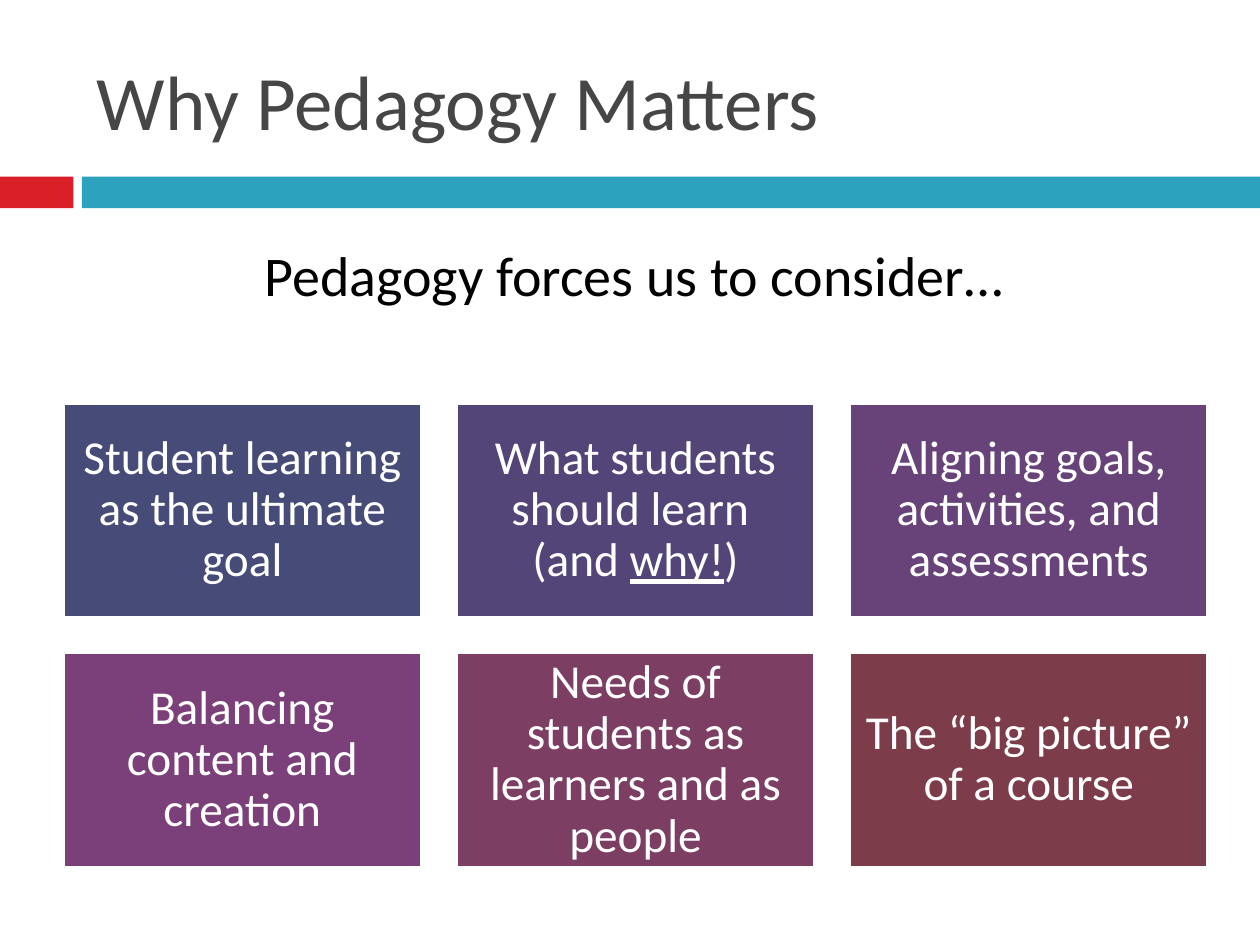
from dataclasses import dataclass

import pptx
import pptx.dml.color
import pptx.enum.shapes
import pptx.enum.text
import pptx.util
from pptx.util import Cm


@dataclass(frozen=True)
class Theme:
    font: str = "Calibri"
    title_size: int = 44
    lead_size: int = 32
    card_size: int = 27
    title: str = "464646"
    lead: str = "000000"
    white: str = "FFFFFF"
    accent: str = "DA1F28"
    band: str = "2DA2BF"
    cards: tuple = ("474B78", "544579", "67437A", "7B4079", "7C3E63", "7D3C4A")


@dataclass(frozen=True)
class Box:
    """A region of the slide, in centimetres."""
    left: float
    top: float
    width: float
    height: float

    def lengths(self):
        return Cm(self.left), Cm(self.top), Cm(self.width), Cm(self.height)


THEME = Theme()
UNDERLINED = "why!"
# Each card is a list of paragraphs, each paragraph a list of runs.
CARDS = [
    [["Student learning as the ultimate goal"]],
    [["What students should learn "], ["(and ", UNDERLINED, ")"]],
    [["Aligning goals, activities, and assessments"]],
    [["Balancing content and creation"]],
    [["Needs of students as learners and as people"]],
    [["The “big picture” of a course"]],
]


def rgb(value):
    return pptx.dml.color.RGBColor.from_string(value)


def format_run(run, size, color):
    run.font.name = THEME.font
    run.font.size = pptx.util.Pt(size)
    run.font.color.rgb = rgb(color)


def add_rectangle(slide, box, fill):
    shape = slide.shapes.add_shape(
        pptx.enum.shapes.MSO_SHAPE.RECTANGLE, *box.lengths())
    shape.shadow.inherit = False
    shape.fill.solid()
    shape.fill.fore_color.rgb = rgb(fill)
    shape.line.fill.background()
    return shape


def add_line_of_text(slide, box, text, size, color, anchor):
    text_frame = slide.shapes.add_textbox(*box.lengths()).text_frame
    text_frame.word_wrap = True
    text_frame.vertical_anchor = anchor
    text_frame.text = text
    format_run(text_frame.paragraphs[0].runs[0], size, color)


def add_header(slide, box):
    """Title above a two-part colour band that spans the box."""
    band_height, accent_width, gap = 0.64, 1.48, 0.17
    band_top = box.top + box.height - band_height
    band_left = box.left + accent_width + gap
    add_rectangle(slide, Box(box.left, band_top, accent_width, band_height),
                  THEME.accent)
    add_rectangle(slide, Box(band_left, band_top,
                             box.left + box.width - band_left, band_height),
                  THEME.band)
    title_box = Box(box.left + 1.7, box.top + 0.64, box.width - 2.74, 2.74)
    add_line_of_text(slide, title_box, "Why Pedagogy Matters",
                     THEME.title_size, THEME.title,
                     pptx.enum.text.MSO_ANCHOR.MIDDLE)


def add_card(slide, box, paragraphs, fill):
    shape = add_rectangle(slide, box, fill)
    shape.line.color.rgb = rgb(THEME.white)
    shape.line.width = pptx.util.Pt(1.5)
    text_frame = shape.text_frame
    text_frame.word_wrap = True
    text_frame.vertical_anchor = pptx.enum.text.MSO_ANCHOR.MIDDLE
    text_frame.margin_left = text_frame.margin_right = Cm(0.28)
    text_frame.margin_top = text_frame.margin_bottom = Cm(0.28)
    for index, texts in enumerate(paragraphs):
        paragraph = (text_frame.add_paragraph() if index
                     else text_frame.paragraphs[0])
        paragraph.alignment = pptx.enum.text.PP_ALIGN.CENTER
        paragraph.line_spacing = 0.9
        for text in texts:
            run = paragraph.add_run()
            run.text = text
            format_run(run, THEME.card_size, THEME.white)
            if text == UNDERLINED:
                run.font.underline = True


def add_card_grid(slide, box, columns=3, gap=0.72):
    rows = len(CARDS) // columns
    width = (box.width - gap * (columns - 1)) / columns
    height = (box.height - gap * (rows - 1)) / rows
    for index, (paragraphs, fill) in enumerate(zip(CARDS, THEME.cards)):
        row, column = divmod(index, columns)
        card_box = Box(box.left + column * (width + gap),
                       box.top + row * (height + gap), width, height)
        add_card(slide, card_box, paragraphs, fill)


def main():
    presentation = pptx.Presentation()
    presentation.slide_width = Cm(25.4)
    presentation.slide_height = Cm(19.05)
    slide = presentation.slides.add_slide(presentation.slide_layouts[6])
    add_header(slide, Box(0, 0, 25.4, 4.2))
    add_card_grid(slide, Box(1.28, 8.13, 23.06, 9.35))
    add_line_of_text(slide, Box(5.08, 4.72, 17.35, 1.63),
                     "Pedagogy forces us to consider…",
                     THEME.lead_size, THEME.lead,
                     pptx.enum.text.MSO_ANCHOR.TOP)
    presentation.save("out.pptx")


if __name__ == "__main__":
    main()
